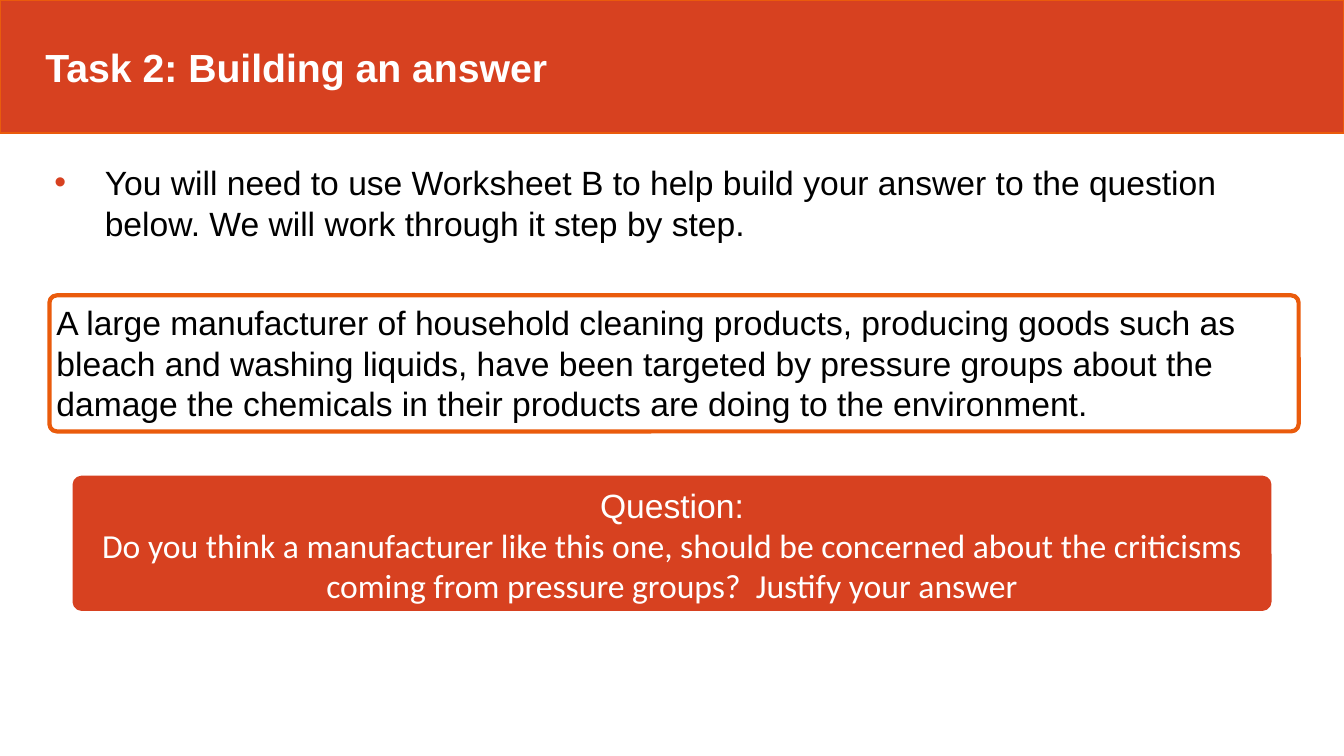
import pptx
import pptx.dml.color
import pptx.enum.shapes
import pptx.enum.text
import pptx.oxml
import pptx.util
from pptx.util import Inches

RED = pptx.dml.color.RGBColor(0xD7, 0x41, 0x20)
ORANGE = pptx.dml.color.RGBColor(0xEA, 0x5B, 0x0C)
WHITE = pptx.dml.color.RGBColor(0xFF, 0xFF, 0xFF)
BLACK = pptx.dml.color.RGBColor(0, 0, 0)

RECTANGLE = pptx.enum.shapes.MSO_SHAPE.RECTANGLE
ROUNDED = pptx.enum.shapes.MSO_SHAPE.ROUNDED_RECTANGLE
TOP = pptx.enum.text.MSO_ANCHOR.TOP
MIDDLE = pptx.enum.text.MSO_ANCHOR.MIDDLE
LEFT = pptx.enum.text.PP_ALIGN.LEFT
CENTER = pptx.enum.text.PP_ALIGN.CENTER


class LessonSlide:
    font_name = "Arial"
    body_size = 24
    margin = Inches(0.05)

    def __init__(self, presentation):
        self.slide = presentation.slides.add_slide(presentation.slide_layouts[6])

    def panel(self, kind, box, fill, line, width):
        shape = self.slide.shapes.add_shape(kind, *map(Inches, box))
        shape.shadow.inherit = False
        if kind == ROUNDED:
            shape.adjustments[0] = 0.054
        if fill is None:
            shape.fill.background()
        else:
            shape.fill.solid()
            shape.fill.fore_color.rgb = fill
        shape.line.color.rgb = line
        shape.line.width = pptx.util.Pt(width)

    def text(self, box, lines, color=BLACK, align=LEFT, anchor=TOP, **font_format):
        frame = self.slide.shapes.add_textbox(*map(Inches, box)).text_frame
        frame_format = {
            "word_wrap": True,
            "vertical_anchor": anchor,
            "margin_left": self.margin,
            "margin_top": self.margin,
            "margin_right": self.margin,
            "margin_bottom": self.margin,
        }
        for name, value in frame_format.items():
            setattr(frame, name, value)
        for index, (words, font_name) in enumerate(lines):
            paragraph = frame.add_paragraph() if index else frame.paragraphs[0]
            paragraph.alignment = align
            run = paragraph.add_run()
            run.text = words
            run.font.color.rgb = color
            run_format = {"name": font_name, "size": pptx.util.Pt(self.body_size)}
            for name, value in (run_format | font_format).items():
                setattr(run.font, name, value)
        return frame

    def indent(self, paragraph, left, first):
        properties = paragraph._p.get_or_add_pPr()
        properties.set("marL", str(Inches(left)))
        properties.set("indent", str(Inches(first)))
        return properties

    def title(self, box, words):
        frame = self.text(box, [(words, self.font_name)], WHITE, anchor=MIDDLE,
                          size=pptx.util.Pt(28), bold=True)
        self.indent(frame.paragraphs[0], 0, 0.4)

    def bullet(self, box, words):
        paragraph = self.text(box, [(words, self.font_name)]).paragraphs[0]
        paragraph.space_before = pptx.util.Pt(12)
        properties = self.indent(paragraph, 0.5, -0.5)
        namespace = pptx.oxml.ns.nsdecls("a")
        for markup in (
            f'<a:buClr {namespace}><a:srgbClr val="{RED}"/></a:buClr>',
            f'<a:buFont {namespace} typeface="{self.font_name}"/>',
            f'<a:buChar {namespace} char="•"/>',
        ):
            properties.append(pptx.oxml.parse_xml(markup))


def main():
    presentation = pptx.Presentation()
    presentation.slide_width = Inches(13.33)
    presentation.slide_height = Inches(7.5)
    lesson = LessonSlide(presentation)

    lesson.panel(RECTANGLE, (0, 0, 13.33, 1.32), RED, ORANGE, 1)
    lesson.title((0, 0.4, 13.33, 0.53), "Task 2: Building an answer")

    lesson.bullet(
        (0.49, 1.56, 12.6, 0.87),
        "You will need to use Worksheet B to help build your answer to the question "
        "below. We will work through it step by step.",
    )

    lesson.panel(ROUNDED, (0.49, 2.93, 12.39, 1.35), None, ORANGE, 3)
    lesson.text(
        (0.51, 2.95, 12.35, 1.26),
        [("A large manufacturer of household cleaning products, producing goods such as "
          "bleach and washing liquids, have been targeted by pressure groups about the "
          "damage the chemicals in their products are doing to the environment.", "Arial")],
    )

    lesson.panel(ROUNDED, (0.74, 4.74, 11.85, 1.3), RED, RED, 3)
    lesson.text(
        (0.76, 4.76, 11.81, 1.27),
        [("Question:", "Arial"),
         ("Do you think a manufacturer like this one, should be concerned about the "
          "criticisms coming from pressure groups?  Justify your answer", "Calibri")],
        WHITE, CENTER,
    )
    presentation.save("out.pptx")


if __name__ == "__main__":
    main()
